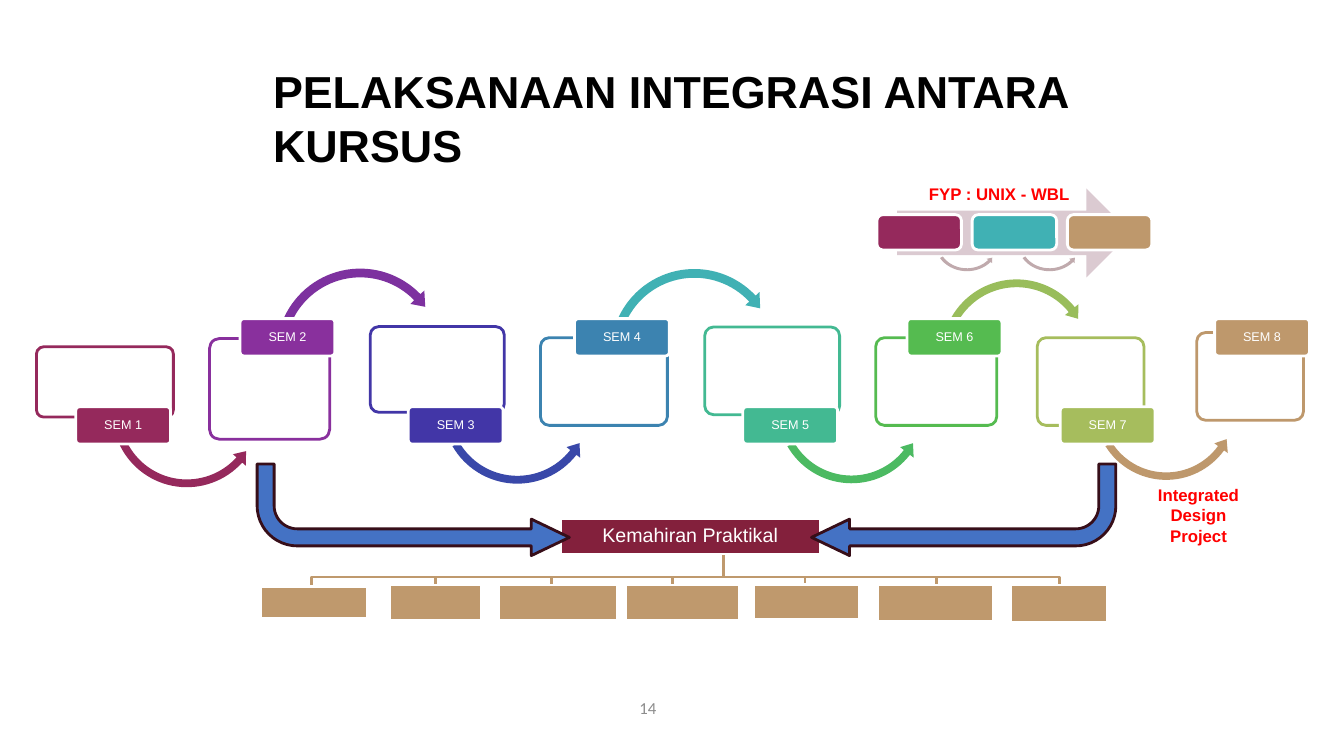
import math
from dataclasses import dataclass

import lxml.etree
import pptx
import pptx.dml.color
import pptx.enum.shapes
import pptx.enum.text
import pptx.oxml.ns
import pptx.util

Cm = pptx.util.Cm
qn = pptx.oxml.ns.qn
SHAPE = pptx.enum.shapes.MSO_SHAPE
ALIGN = pptx.enum.text.PP_ALIGN
ANCHOR = pptx.enum.text.MSO_ANCHOR


@dataclass(frozen=True)
class Theme:
    """Colours, fonts and type sizes of the slide."""
    font: str = "Arial"
    number_font: str = "Calibri"
    black: str = "000000"
    white: str = "FFFFFF"
    red: str = "FF0000"
    gray: str = "8C8C8C"
    wine: str = "95295C"
    teal: str = "40B1B4"
    tan: str = "BE986C"
    skill: str = "BF996D"
    hub: str = "83203C"
    bend: str = "4472C4"
    bend_line: str = "370E19"
    pale_arrow: str = "DBCAD1"
    pale_arc: str = "C0AAAD"
    title: int = 32
    heading: int = 14
    note: int = 12
    label: int = 9
    line: int = 2


THEME = Theme()

SEMESTERS = [
    ("95295C", 1.01, (0.02, 2.24, 3.45, 1.77), (3.81, 3.9, 1.78, 154, 33), "95295C"),
    ("89309D", 5.15, (4.38, 2.03, 3.03, 2.54), (8.18, 2.38, 2, 155, 35), "7D319F"),
    ("4236A7", 9.39, (8.43, 1.73, 3.38, 2.16), (12.14, 3.8, 1.79, 150, 29), "3948A9"),
    ("3C83B0", 13.58, (12.72, 2.01, 3.2, 2.21), (16.6, 2.39, 2, 155, 34), "40B1B4"),
    ("43B992", 17.82, (16.86, 1.74, 3.4, 2.21), (20.56, 3.81, 1.77, 150, 29), "4CBA62"),
    ("55BB50", 21.96, (21.17, 2.01, 3.05, 2.21), (24.72, 2.43, 1.79, 150, 30), "99BD5B"),
    ("A6BD5D", 25.82, (25.24, 2.01, 2.69, 2.21), (28.49, 3.79, 1.71, 148, 27), "BE986C"),
    ("BE986C", 29.71, (29.26, 1.88, 2.69, 2.21), None, None),
]

SKILLS = [
    (0.1, 3.08, 2.69, 0.81, 1.37),
    (3.35, 3.05, 2.31, 0.89, 4.49),
    (6.09, 3.05, 3, 0.89, 7.41),
    (9.29, 3.05, 2.87, 0.89, 10.46),
    (12.52, 3.03, 2.67, 0.89, 13.81),
    (15.64, 3.05, 2.92, 0.91, 17.12),
    (18.98, 3.05, 2.46, 0.94, 20.22),
]


def rgb(color):
    """Turn a hex string into a colour."""
    return pptx.dml.color.RGBColor.from_string(color)


def write_text(shape, text, *, size, color, font=THEME.font, bold=False, align=ALIGN.LEFT,
               anchor=ANCHOR.TOP, insets=(0.25, 0.13), spacing=1.0):
    """Write one formatted paragraph into a shape."""
    frame = shape.text_frame
    frame.word_wrap = True
    frame.auto_size = pptx.enum.text.MSO_AUTO_SIZE.NONE
    frame.vertical_anchor = anchor
    frame.margin_left = frame.margin_right = Cm(insets[0])
    frame.margin_top = frame.margin_bottom = Cm(insets[1])
    paragraph = frame.paragraphs[0]
    paragraph.alignment = align
    paragraph.line_spacing = spacing
    run = paragraph.add_run()
    run.text = text
    run.font.name = font
    run.font.size = pptx.util.Pt(size)
    run.font.bold = bold
    run.font.color.rgb = rgb(color)


def paint(shape, fill=None, line=None):
    """Give a shape an optional flat fill and an optional outline."""
    shape.shadow.inherit = False
    if fill:
        shape.fill.solid()
        shape.fill.fore_color.rgb = rgb(fill)
    else:
        shape.fill.background()
    if line:
        shape.line.color.rgb = rgb(line)
        shape.line.width = pptx.util.Pt(THEME.line)
    else:
        shape.line.fill.background()


def add_block(slide, kind, left, top, width, height, fill, line=None, adjustments=()):
    """Add a painted preset shape."""
    shape = slide.shapes.add_shape(kind, Cm(left), Cm(top), Cm(width), Cm(height))
    for index, value in enumerate(adjustments):
        shape.adjustments[index] = value
    paint(shape, fill, line)
    return shape


def add_note(slide, text, left, top, width, height, **text_format):
    """Add a text box."""
    box = slide.shapes.add_textbox(Cm(left), Cm(top), Cm(width), Cm(height))
    write_text(box, text, **text_format)


def add_outline(slide, points, close):
    """Add a freeform through points given in centimetres."""
    corners = [(Cm(x), Cm(y)) for x, y in points]
    builder = slide.shapes.build_freeform(*corners[0])
    builder.add_line_segments(corners[1:], close=close)
    return builder.convert_to_shape()


def curve_controls(radius, start, end):
    """Return polar control points of two Bezier curves along an arc."""
    half = (end - start) / 2
    reach = 4 / 3 * math.tan(math.radians(half) / 4)
    pull, turn = radius * math.hypot(1, reach), math.degrees(math.atan(reach))
    return [point for first in (start, start + half)
            for point in ((pull, first + turn), (pull, first + half - turn),
                          (radius, first + half))]


def add_arc_arrow(slide, x, y, radius, start, tip, color, below=True, squash=1):
    """Add a curved arrow from the start angle to the tip angle, framed by its circle."""
    base = tip + 9
    outer, inner, head = 1.055 * radius, 0.945 * radius, 0.122 * radius
    polar = [(outer, start), *curve_controls(outer, start, base),
             (radius + head, base), (radius, tip), (radius - head, base),
             (inner, base), *curve_controls(inner, base, start)]
    side = squash if below else -squash
    shape = add_outline(slide, [(x + r * math.cos(math.radians(angle)),
                                 y + side * r * math.sin(math.radians(angle)))
                                for r, angle in polar], True)
    paint(shape, color)
    outline = next(shape.element.iter(qn("a:path")))
    segments = outline.findall(qn("a:lnTo"))
    for first in (0, 3, 10, 13):
        curve = lxml.etree.Element(qn("a:cubicBezTo"))
        segments[first].addprevious(curve)
        for segment in segments[first:first + 3]:
            curve.append(segment[0])
            outline.remove(segment)
    frame_x, frame_y = 1.12 * radius, 1.12 * radius * squash
    left, top = Cm(x - frame_x), Cm(y - frame_y)
    shift_x, shift_y = shape.left - left, shape.top - top
    for point in outline.iter(qn("a:pt")):
        point.set("x", str(int(point.get("x")) + shift_x))
        point.set("y", str(int(point.get("y")) + shift_y))
    shape.left, shape.top = left, top
    shape.width, shape.height = Cm(2 * frame_x), Cm(2 * frame_y)
    outline.set("w", str(shape.width))
    outline.set("h", str(shape.height))


def build_title(slide, left, top, width, height):
    """Place the slide title."""
    title = slide.shapes.title
    title.left, title.top, title.width, title.height = map(Cm, (left, top, width, height))
    write_text(title, "PELAKSANAAN INTEGRASI ANTARA KURSUS",
               size=THEME.title, color=THEME.black, bold=True)


def build_semesters(slide, left, top):
    """Place the chain of eight semesters and the project note."""
    for number, (color, label_left, card, arc, arc_color) in enumerate(SEMESTERS, 1):
        below = number % 2 == 1
        x, y, width, height = card
        add_block(slide, SHAPE.ROUNDED_RECTANGLE, left + x, top + y, width, height,
                  THEME.white, color, (0.1,))
        if arc:
            add_arc_arrow(slide, left + arc[0], top + arc[1], *arc[2:], arc_color, below)
        label = add_block(slide, SHAPE.ROUNDED_RECTANGLE, left + label_left,
                          top + (3.75 if below else 1.53), 2.39, 0.94,
                          color, THEME.white, (0.1,))
        write_text(label, f"SEM {number}", size=THEME.label, color=THEME.white,
                   align=ALIGN.CENTER, anchor=ANCHOR.MIDDLE, insets=(0.05, 0.03), spacing=0.9)
    add_note(slide, "Integrated Design Project", left + 27.58, top + 5.59, 3.45, 1.8,
             size=THEME.note, color=THEME.red, bold=True, align=ALIGN.CENTER)


def build_final_year_project(slide, left, top):
    """Place the three-stage final year project arrow."""
    add_block(slide, SHAPE.RIGHT_ARROW, left + 0.51, top + 0.25, 5.89, 2.24, THEME.pale_arrow)
    for index, color in enumerate((THEME.wine, THEME.teal, THEME.tan)):
        add_block(slide, SHAPE.ROUNDED_RECTANGLE, left + 2.4 * index, top + 0.91, 2.13, 0.89,
                  color, THEME.white)
    for index in range(2):
        add_arc_arrow(slide, left + 2.27 + 2.08 * index, top + 1.63, 0.76, 148, 33,
                      THEME.pale_arc, squash=0.88)
    add_note(slide, "FYP : UNIX - WBL", left + 1.06, top, 4.52, 0.76,
             size=THEME.note, color=THEME.red, bold=True)


def build_practical_skills(slide, left, top):
    """Place the practical skills hub, its tree and the two bent arrows."""
    stem, bus = left + 11.76, top + 2.85
    for x, y, width, height, drop in SKILLS:
        branch = add_outline(slide, [(stem, top + 2.26), (stem, bus), (left + drop, bus),
                                     (left + drop, top + 3.05)], False)
        paint(branch, line=THEME.skill)
        add_block(slide, SHAPE.RECTANGLE, left + x, top + y, width, height,
                  THEME.skill, THEME.white)
    hub = add_block(slide, SHAPE.RECTANGLE, left + 7.64, top + 1.38, 6.55, 0.89,
                    THEME.hub, THEME.white)
    write_text(hub, "Kemahiran Praktikal", size=THEME.heading, color=THEME.white,
               align=ALIGN.CENTER, anchor=ANCHOR.MIDDLE, insets=(0.03, 0.03), spacing=0.9)
    for x, width, mirrored in ((0, 7.87, True), (13.97, 7.67, False)):
        arrow = add_block(slide, SHAPE.BENT_ARROW, left + x, top, width, 2.31, THEME.bend,
                          THEME.bend_line, (0.186, 0.199, 0.415, 0.438))
        arrow.rotation = 180
        if mirrored:
            arrow.element.spPr.find(qn("a:xfrm")).set("flipH", "1")


def main():
    """Build and save the slide."""
    presentation = pptx.Presentation()
    presentation.slide_width, presentation.slide_height = Cm(33.87), Cm(19.05)
    slide = presentation.slides.add_slide(presentation.slide_layouts[5])
    build_semesters(slide, 0.9, 6.5)
    build_title(slide, 6.63, 1.48, 21.87, 1.63)
    build_final_year_project(slide, 22.1, 4.5)
    build_practical_skills(slide, 6.48, 11.69)
    add_note(slide, "14", 12.52, 17.33, 7.62, 1.02, size=THEME.note, color=THEME.gray,
             font=THEME.number_font, align=ALIGN.CENTER, anchor=ANCHOR.MIDDLE)
    presentation.save("out.pptx")


if __name__ == "__main__":
    main()
